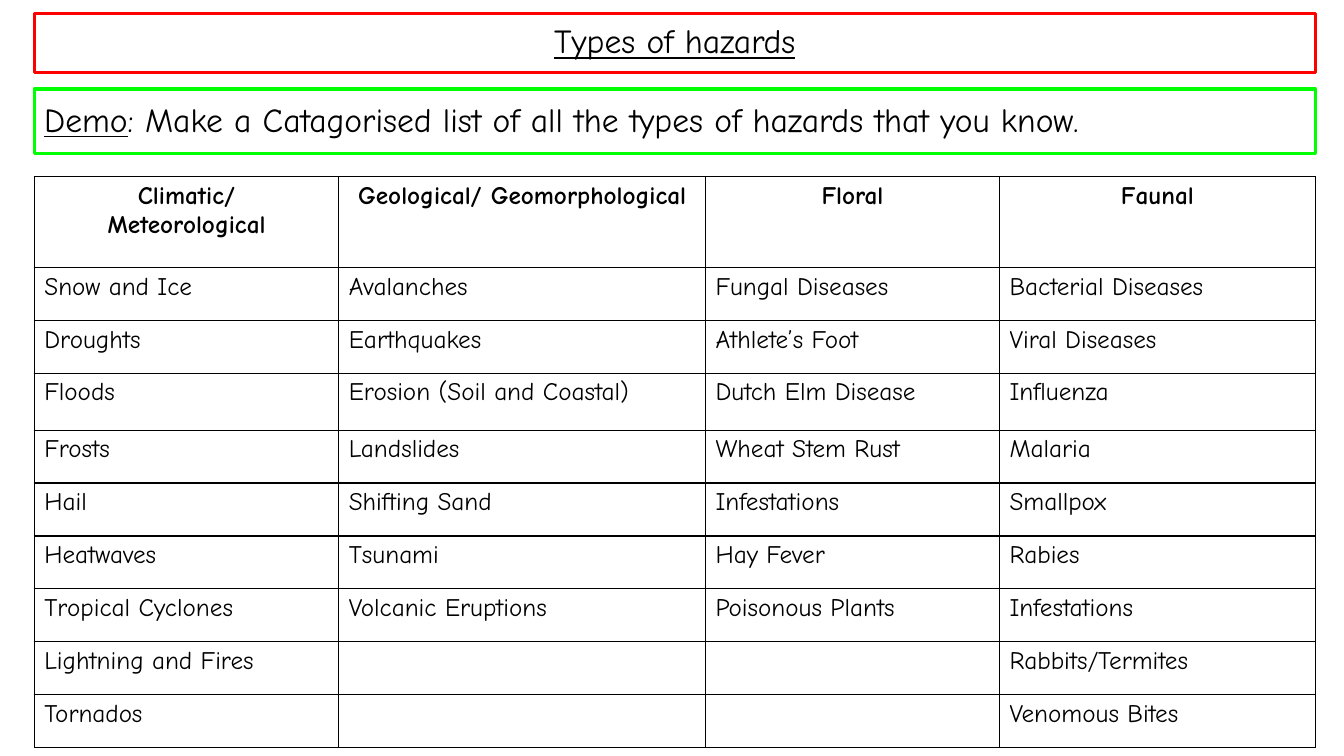
"""Build a slide that lists natural hazards by category."""
from lxml import etree
from pptx import Presentation
from pptx.dml.color import RGBColor
from pptx.enum.shapes import MSO_SHAPE
from pptx.enum.text import MSO_ANCHOR, PP_ALIGN
from pptx.oxml import parse_xml
from pptx.oxml.ns import nsdecls
from pptx.util import Pt

RECT = MSO_SHAPE.RECTANGLE
MIDDLE = MSO_ANCHOR.MIDDLE
LEFT, CENTER = PP_ALIGN.LEFT, PP_ALIGN.CENTER
BLACK = RGBColor(0, 0, 0)
RED = RGBColor(255, 0, 0)
GREEN = RGBColor(0, 255, 0)
FONT = "Comic Neue"
EDGE, WIDTH = 24.5, 915
COLS = [217.5, 262, 210, 225.5]
ROWS = [65] + [37.8] * 2 + [40.7] + [37.8] * 6
HEADS = ["Climatic/\nMeteorological", "Geological/ Geomorphological",
         "Floral", "Faunal"]
HAZARDS = [
    ["Snow and Ice", "Avalanches", "Fungal Diseases", "Bacterial Diseases"],
    ["Droughts", "Earthquakes", "Athlete’s Foot", "Viral Diseases"],
    ["Floods", "Erosion (Soil and Coastal)", "Dutch Elm Disease", "Influenza"],
    ["Frosts", "Landslides", "Wheat Stem Rust", "Malaria"],
    ["Hail", "Shifting Sand", "Infestations", "Smallpox"],
    ["Heatwaves", "Tsunami", "Hay Fever", "Rabies"],
    ["Tropical Cyclones", "Volcanic Eruptions", "Poisonous Plants",
     "Infestations"],
    ["Lightning and Fires", "", "", "Rabbits/Termites"],
    ["Tornados", "", "", "Venomous Bites"],
]


def add_run(para, text, size, bold=False, under=False):
    """Add one black run to a paragraph."""
    run = para.add_run()
    run.text = text
    font = run.font
    font.name, font.size = FONT, Pt(size)
    font.bold, font.underline = bold, under
    font.color.rgb = BLACK


def add_box(slide, top, height, color, align, runs):
    """Add an outlined box whose runs are (text, underline) pairs."""
    box = slide.shapes.add_shape(RECT, Pt(EDGE), Pt(top), Pt(WIDTH), Pt(height))
    box.shadow.inherit = False
    box.fill.background()
    box.line.color.rgb = color
    box.line.width = Pt(2.25)
    frame = box.text_frame
    frame.word_wrap = True
    frame.vertical_anchor = MIDDLE
    para = frame.paragraphs[0]
    para.alignment, para.line_spacing = align, 0.9
    for text, under in runs:
        add_run(para, text, 24, under=under)


def add_rules(cell):
    """Draw a thin black border on all four sides of a cell."""
    props = cell._tc.get_or_add_tcPr()
    for side in "LRTB":
        rule = parse_xml(f'<a:ln{side} {nsdecls("a")} w="{Pt(1)}"><a:solidFill>'
                         f'<a:srgbClr val="{BLACK}"/></a:solidFill></a:ln{side}>')
        etree.ElementBase.append(props, rule)


def fill_cell(cell, text, head):
    """Style a cell and write its lines as paragraphs."""
    add_rules(cell)
    cell.fill.background()
    frame = cell.text_frame
    for i, line in enumerate(text.split("\n") if text else []):
        para = frame.add_paragraph() if i else frame.paragraphs[0]
        para.alignment = CENTER if head else LEFT
        add_run(para, line, 18, bold=head)


def add_grid(slide, top):
    """Add the table of hazards under its category heads."""
    table = slide.shapes.add_table(len(ROWS), len(COLS), Pt(EDGE), Pt(top),
                                   Pt(WIDTH), Pt(sum(ROWS))).table
    table.first_row = table.horz_banding = False
    for col, width in zip(table.columns, COLS):
        col.width = Pt(width)
    for row, height in zip(table.rows, ROWS):
        row.height = Pt(height)
    for r, texts in enumerate([HEADS] + HAZARDS):
        for c, text in enumerate(texts):
            fill_cell(table.cell(r, c), text, r == 0)


def main():
    """Build and save the slide."""
    deck = Presentation()
    deck.slide_width, deck.slide_height = Pt(960), Pt(540)
    slide = deck.slides.add_slide(deck.slide_layouts[6])
    add_grid(slide, 126)
    add_box(slide, 9.4, 42.4, RED, CENTER, [("Types of hazards", True)])
    add_box(slide, 63.6, 46, GREEN, LEFT, [
        ("Demo", True),
        (": Make a Catagorised list of all the types of hazards that you know.",
         False)])
    deck.save("out.pptx")


if __name__ == "__main__":
    main()
